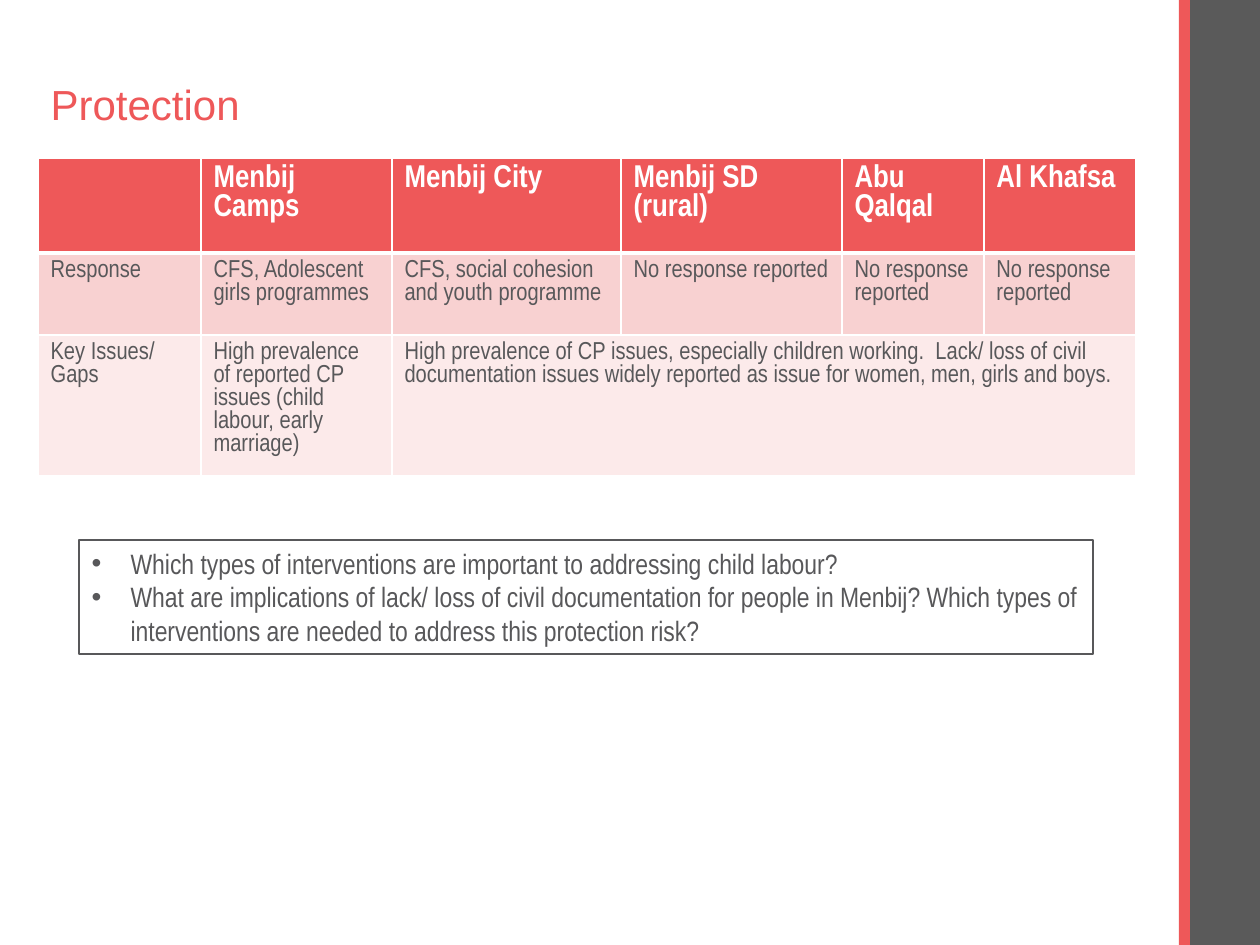
import pptx
import pptx.dml.color
import pptx.enum.shapes
import pptx.enum.text
import pptx.oxml.ns
import pptx.util
from lxml import etree

PX = 914400 / 126

RED = pptx.dml.color.RGBColor(0xEE, 0x58, 0x59)
DARK = pptx.dml.color.RGBColor(0x5A, 0x5A, 0x5A)
GREY = pptx.dml.color.RGBColor(0x58, 0x58, 0x5A)
PINK = pptx.dml.color.RGBColor(0xF8, 0xD1, 0xD1)
PALE = pptx.dml.color.RGBColor(0xFC, 0xEA, 0xEA)
WHITE = pptx.dml.color.RGBColor(0xFF, 0xFF, 0xFF)

COLUMN_WIDTHS = [163, 191, 229, 221, 142, 152]
ROW_HEIGHTS = [95, 82, 141]
ROWS = [
    ["", "Menbij Camps", "Menbij City", "Menbij SD (rural)", "Abu Qalqal", "Al Khafsa"],
    ["Response", "CFS, Adolescent  girls programmes",
     "CFS, social cohesion and youth programme"] + ["No response reported"] * 3,
    ["Key Issues/ Gaps",
     "High prevalence of reported CP issues (child labour, early marriage)",
     "High prevalence of CP issues, especially children working.  Lack/ loss of civil "
     "documentation issues widely reported as issue for women, men, girls and boys."],
]
QUESTIONS = [
    "Which types of interventions are important to addressing child labour?",
    "What are implications of lack/ loss of civil documentation for people in Menbij? "
    "Which types of interventions are needed to address this protection risk?",
]


def px(length):
    return pptx.util.Emu(round(length * PX))


def place(shape, left, top, width, height):
    shape.left, shape.top = px(left), px(top)
    shape.width, shape.height = px(width), px(height)


def add_run(paragraph, text, size, color, font="Arial Narrow", bold=False):
    run = paragraph.add_run()
    run.text = text
    run.font.name = font
    run.font.size = pptx.util.Pt(size)
    run.font.bold = bold
    run.font.color.rgb = color


def add_bar(slide, left, width, color):
    """Add a stripe of full slide height."""
    bar = slide.shapes.add_shape(
        pptx.enum.shapes.MSO_SHAPE.RECTANGLE, px(left), 0, px(width), px(945))
    bar.shadow.inherit = False
    bar.fill.solid()
    bar.fill.fore_color.rgb = color
    bar.line.fill.background()


def fill_title(title):
    place(title, 38, 78, 1086, 58)
    frame = title.text_frame
    frame.auto_size = pptx.enum.text.MSO_AUTO_SIZE.NONE
    frame.vertical_anchor = pptx.enum.text.MSO_ANCHOR.MIDDLE
    paragraph = frame.paragraphs[0]
    paragraph.alignment = pptx.enum.text.PP_ALIGN.LEFT
    paragraph.line_spacing = 0.9
    add_run(paragraph, "Protection", 24, RED, "Arial")


def set_borders(cell, bottom):
    """Draw white cell edges, 1 pt except for the bottom one."""
    properties = cell._tc.get_or_add_tcPr()
    for side, points in (("lnL", 1), ("lnR", 1), ("lnT", 1), ("lnB", bottom)):
        line = etree.SubElement(properties, pptx.oxml.ns.qn("a:" + side),
                                w=str(pptx.util.Pt(points)))
        fill = etree.SubElement(line, pptx.oxml.ns.qn("a:solidFill"))
        etree.SubElement(fill, pptx.oxml.ns.qn("a:srgbClr"), val=str(WHITE))


def add_response_table(slide):
    table = slide.shapes.add_table(
        len(ROW_HEIGHTS), len(COLUMN_WIDTHS), px(38), px(158),
        px(sum(COLUMN_WIDTHS)), px(sum(ROW_HEIGHTS))).table
    for column, width in zip(table.columns, COLUMN_WIDTHS):
        column.width = px(width)
    for row, height in zip(table.rows, ROW_HEIGHTS):
        row.height = px(height)
    table.cell(2, 2).merge(table.cell(2, 5))

    for row_index, fill in enumerate((RED, PINK, PALE)):
        header = row_index == 0
        for cell in table.rows[row_index].cells:
            set_borders(cell, 3 if header else 1)
            cell.fill.solid()
            cell.fill.fore_color.rgb = fill
        for column_index, text in enumerate(ROWS[row_index]):
            if text:
                paragraph = table.cell(row_index, column_index).text_frame.paragraphs[0]
                add_run(paragraph, text, 18 if header else 14,
                        WHITE if header else GREY, bold=header)


def set_bullet(paragraph):
    properties = paragraph._p.get_or_add_pPr()
    indent = px(39)
    properties.set("marL", str(indent))
    properties.set("indent", str(-indent))
    etree.SubElement(properties, pptx.oxml.ns.qn("a:buFont"), typeface="Arial")
    etree.SubElement(properties, pptx.oxml.ns.qn("a:buChar"), char="•")


def fill_questions(body):
    place(body, 79, 540, 1014, 114)
    body.line.color.rgb = GREY
    body.line.width = pptx.util.Pt(0.75)
    frame = body.text_frame
    frame.auto_size = pptx.enum.text.MSO_AUTO_SIZE.NONE
    frame.vertical_anchor = pptx.enum.text.MSO_ANCHOR.TOP
    for index, question in enumerate(QUESTIONS):
        paragraph = frame.add_paragraph() if index else frame.paragraphs[0]
        set_bullet(paragraph)
        paragraph.space_before = pptx.util.Pt(0)
        add_run(paragraph, question, 16, GREY)


def main():
    presentation = pptx.Presentation()
    presentation.slide_width, presentation.slide_height = px(1260), px(945)
    slide = presentation.slides.add_slide(presentation.slide_layouts[1])
    add_bar(slide, 1188, 72, DARK)
    add_bar(slide, 1179, 11, RED)
    fill_title(slide.shapes.title)
    add_response_table(slide)
    fill_questions(slide.placeholders[1])
    presentation.save("out.pptx")


if __name__ == "__main__":
    main()
